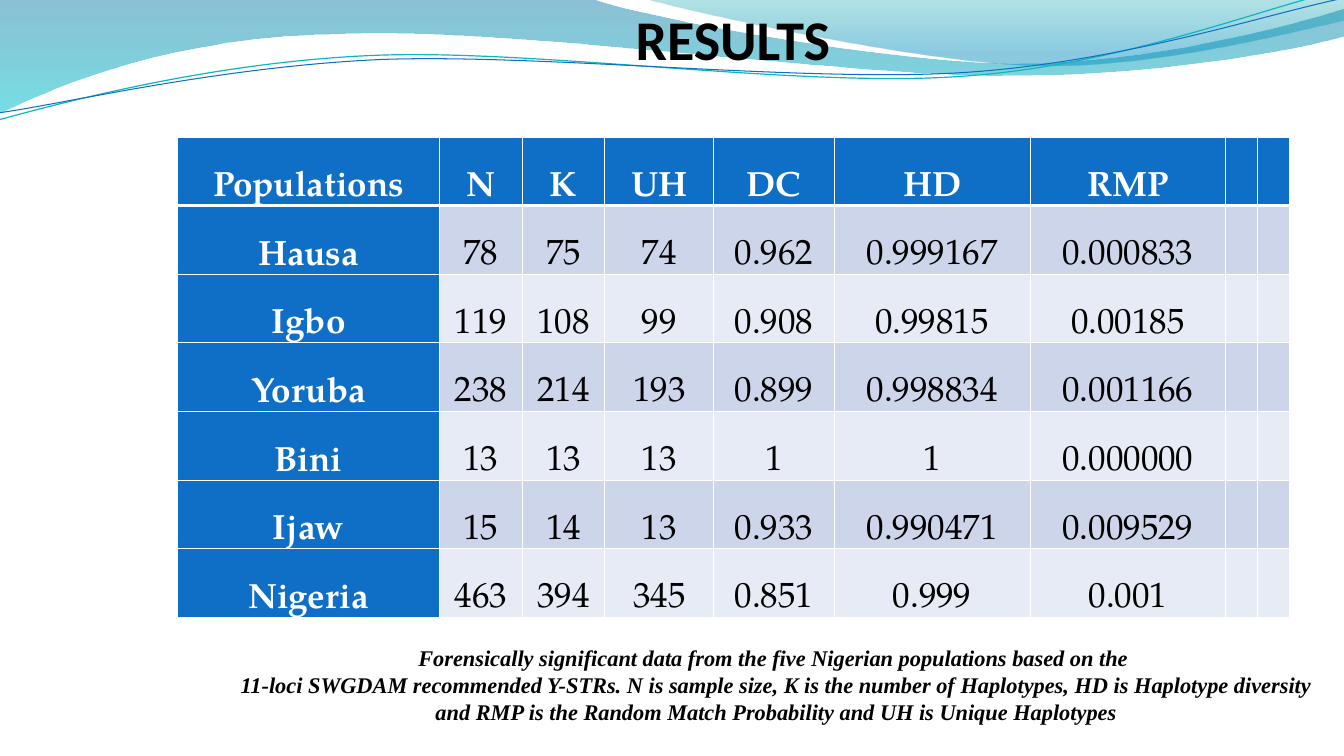
from lxml.etree import SubElement
from pptx import Presentation
from pptx.dml.color import RGBColor
from pptx.enum.text import MSO_ANCHOR, PP_ALIGN
from pptx.oxml import parse_xml
from pptx.oxml.ns import nsdecls, qn
from pptx.util import Cm, Pt

BLUE, WHITE, BLACK = "0F6FC6", "FFFFFF", "000000"
BANDS = ("CCD5EA", "E7EBF5")
COLUMN_WIDTHS = (6.61, 2.08, 2.08, 2.75, 3.03, 4.94, 4.93, 0.81, 0.81)
ROW_HEIGHT = 1.73
RESULTS = (
    ("Populations", "N", "K", "UH", "DC", "HD", "RMP"),
    ("Hausa", "78", "75", "74", "0.962", "0.999167", "0.000833"),
    ("Igbo", "119", "108", "99", "0.908", "0.99815", "0.00185"),
    ("Yoruba", "238", "214", "193", "0.899", "0.998834", "0.001166"),
    ("Bini", "13", "13", "13", "1", "1", "0.000000"),
    ("Ijaw", "15", "14", "13", "0.933", "0.990471", "0.009529"),
    ("Nigeria", "463", "394", "345", "0.851", "0.999", "0.001"),
)
CAPTION = (
    "Forensically significant data from the five Nigerian populations based on the ",
    "11-loci SWGDAM recommended Y-STRs. N is sample size, K is the number of "
    "Haplotypes, HD is Haplotype diversity and RMP is the Random Match "
    "Probability and UH is Unique Haplotypes",
)
LEFT_WAVE = (
    [(0, 0)],
    [(14.91, -0.03)],
    [(16.1, 0.43), (22.48, 1.6), (25.68, 1.6)],
    [(28.91, 1.6), (32.46, 0.66), (33.86, 0.23)],
    [(33.91, 0.91)],
    [(33.3, 1.12), (29.46, 1.93), (25.25, 1.91)],
    [(21.06, 1.91), (12.93, 0.71), (8.71, 0.86)],
    [(4.37, 0.91), (1.55, 2.11), (-0.03, 2.87)],
)
RIGHT_WAVE = (
    [(16.23, -0.03)],
    [(17.25, 0.28), (23.09, 1.57), (26.04, 1.65)],
    [(28.98, 1.75), (32.56, 0.81), (33.86, 0.53)],
    [(33.86, 0)],
)
TEAL_STRAND = (
    [(-0.03, 3.02)],
    [(1.63, 2.57), (5.36, 1.57), (9.37, 1.4)],
    [(13.39, 1.22), (20.07, 2.21), (24.13, 1.93)],
    [(28.19, 1.68), (31.8, 0.2), (33.81, -0.25)],
)
BLUE_STRAND = (
    [(0, 2.84)],
    [(1.6, 2.62), (5.54, 1.68), (9.6, 1.5)],
    [(13.64, 1.35), (20.22, 2.08), (24.26, 1.83)],
    [(28.32, 1.57), (31.88, 0.36), (33.88, -0.05)],
)


def color(value):
    """Turn a hex string into a colour."""
    return RGBColor.from_string(value)


def add_outline(slide, segments, close):
    """Draw an outline from lines (one point) and curves (three points)."""
    start, *ends = [(Cm(x), Cm(y)) for x, y in (segment[-1] for segment in segments)]
    builder = slide.shapes.build_freeform(*start)
    builder.add_line_segments(ends, close=close)
    outline = builder.convert_to_shape()
    outline.shadow.inherit = False
    lines = list(outline.element.spPr.iter(qn("a:lnTo")))
    for line, segment in zip(lines, segments[1:]):
        if len(segment) == 3:
            bend_line(line, segment[:2], outline.left, outline.top)
    return outline


def bend_line(line, controls, left, top):
    """Replace a straight segment with a cubic curve to the same end."""
    curve = parse_xml(f"<a:cubicBezTo {nsdecls('a')}/>")
    for x, y in controls:
        SubElement(curve, qn("a:pt"), x=str(Cm(x) - left), y=str(Cm(y) - top))
    line.getparent().replace(line, curve)
    curve.append(line[0])


def add_wave(slide, segments, stops):
    """Draw a wave with a translucent gradient from top to bottom."""
    wave = add_outline(slide, segments, True)
    wave.line.fill.background()
    wave.fill.gradient()
    wave.fill.gradient_angle = 270
    for stop, (position, shade, _) in zip(wave.fill.gradient_stops, stops):
        stop.position = position
        stop.color.rgb = color(shade)
    for tint, (_, _, opacity) in zip(wave.element.spPr.iter(qn("a:srgbClr")), stops):
        SubElement(tint, qn("a:alpha"), val=str(opacity * 1000))


def add_strand(slide, segments, shade, width):
    """Draw a thin curved line."""
    strand = add_outline(slide, segments, False)
    strand.fill.background()
    strand.line.color.rgb = color(shade)
    strand.line.width = Pt(width)


def format_paragraph(paragraph, font_name, size, shade, bold=True, italic=False):
    """Centre a paragraph and set the font of its runs."""
    paragraph.alignment = PP_ALIGN.CENTER
    for run in paragraph.runs:
        font = run.font
        font.name, font.size = font_name, Pt(size)
        font.bold, font.italic = bold, italic
        font.color.rgb = color(shade)


def add_text(slide, box, lines, font_name, size, anchor, italic=False):
    """Add a centred text box with one paragraph per line."""
    text_frame = slide.shapes.add_textbox(*map(Cm, box)).text_frame
    text_frame.word_wrap = True
    text_frame.vertical_anchor = anchor
    text_frame.text = "\n".join(lines)
    for paragraph in text_frame.paragraphs:
        format_paragraph(paragraph, font_name, size, BLACK, italic=italic)


def add_borders(cell, top, bottom):
    """Give a cell white borders, with widths in points."""
    properties = cell._tc.get_or_add_tcPr()
    for side, width in (("L", 1), ("R", 1), ("T", top), ("B", bottom)):
        border = SubElement(properties, qn(f"a:ln{side}"), w=str(Pt(width)))
        fill = SubElement(border, qn("a:solidFill"))
        SubElement(fill, qn("a:srgbClr"), val=WHITE)


def format_cell(cell, row, column):
    """Style a cell by its place in the table."""
    heading = row == 0 or column == 0
    add_borders(cell, 3 if row == 1 else 1, 3 if row == 0 else 1)
    cell.fill.solid()
    cell.fill.fore_color.rgb = color(BLUE if heading else BANDS[(row - 1) % 2])
    cell.vertical_anchor = MSO_ANCHOR.BOTTOM
    cell.margin_left = cell.margin_right = Cm(0.15)
    cell.margin_top = cell.margin_bottom = Cm(0)
    paragraph = cell.text_frame.paragraphs[0]
    paragraph.line_spacing = 1.15
    format_paragraph(paragraph, "TeX Gyre Pagella", 25,
                     WHITE if heading else BLACK, bold=heading)


def add_results_table(slide, left, top):
    """Add the table of populations."""
    table = slide.shapes.add_table(
        len(RESULTS), len(COLUMN_WIDTHS), Cm(left), Cm(top),
        Cm(sum(COLUMN_WIDTHS)), Cm(ROW_HEIGHT * len(RESULTS))).table
    table.first_col = True
    for table_column, width in zip(table.columns, COLUMN_WIDTHS):
        table_column.width = Cm(width)
    for row, values in enumerate(RESULTS):
        table.rows[row].height = Cm(ROW_HEIGHT)
        for column, value in enumerate(values):
            table.cell(row, column).text = value
        for column in range(len(COLUMN_WIDTHS)):
            format_cell(table.cell(row, column), row, column)


def main():
    """Build the results slide."""
    presentation = Presentation()
    presentation.slide_width, presentation.slide_height = Cm(33.87), Cm(19.05)
    slide = presentation.slides.add_slide(presentation.slide_layouts[6])
    add_wave(slide, LEFT_WAVE, ((0, "0074A1", 45), (1, "00C6CF", 55)))
    add_wave(slide, RIGHT_WAVE, ((0, "00A1A9", 30), (0.8, "008BBF", 45)))
    add_strand(slide, TEAL_STRAND, "0AB8BF", 0.85)
    add_strand(slide, BLUE_STRAND, BLUE, 0.75)
    add_results_table(slide, 4.47, 3.45)
    add_text(slide, (5.54, 7.54, 28.04, 10.85), CAPTION, "Times New Roman", 16,
             MSO_ANCHOR.BOTTOM, italic=True)
    add_text(slide, (4.45, 0, 28.04, 1.94), ("RESULTS",), "Calibri", 40, MSO_ANCHOR.MIDDLE)
    presentation.save("out.pptx")


if __name__ == "__main__":
    main()
